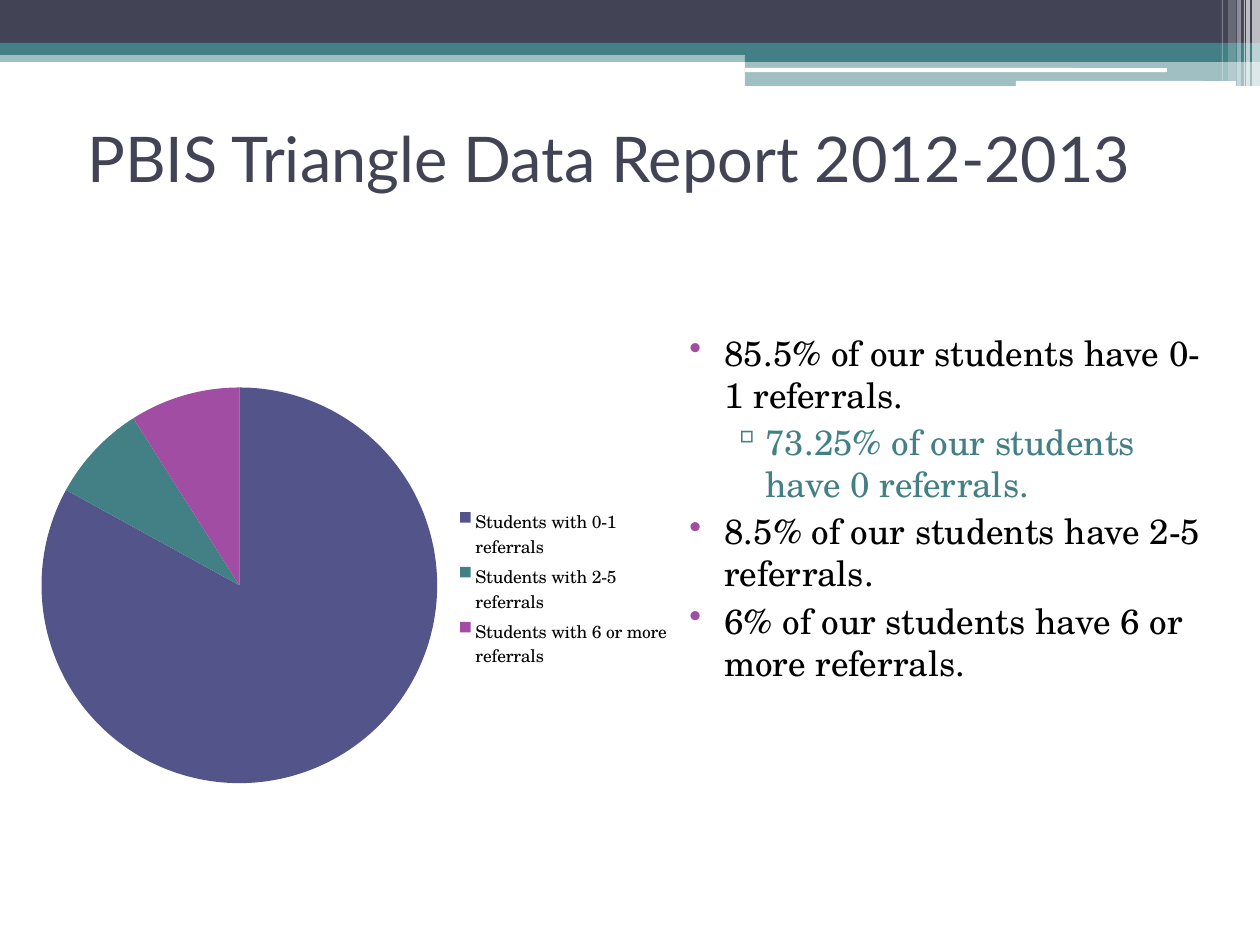
from lxml import etree
from pptx import Presentation
from pptx.chart.data import CategoryChartData
from pptx.dml.color import RGBColor
from pptx.enum.chart import XL_CHART_TYPE, XL_LEGEND_POSITION
from pptx.enum.shapes import MSO_SHAPE
from pptx.enum.text import MSO_ANCHOR, MSO_AUTO_SIZE, PP_ALIGN
from pptx.oxml import parse_xml
from pptx.oxml.ns import nsdecls, qn
from pptx.util import Pt

EMU_PER_PX = 914400 / 126
RECT, ROUNDED = MSO_SHAPE.RECTANGLE, MSO_SHAPE.ROUNDED_RECTANGLE
PIE, LEGEND_RIGHT = XL_CHART_TYPE.PIE, XL_LEGEND_POSITION.RIGHT
MIDDLE, CENTER, NO_AUTOFIT = MSO_ANCHOR.MIDDLE, PP_ALIGN.CENTER, MSO_AUTO_SIZE.NONE

WHITE = RGBColor(0xFF, 0xFF, 0xFF)
BLACK = RGBColor(0x00, 0x00, 0x00)
SLATE = RGBColor(0x42, 0x44, 0x56)
INDIGO = RGBColor(0x53, 0x54, 0x8A)
TEAL = RGBColor(0x43, 0x80, 0x86)
PURPLE = RGBColor(0xA0, 0x4D, 0xA3)
HEADING_FONT, BODY_FONT = "Lato", "TeX Gyre Schola"

HEADER_BANDS = [
    (RECT, (0, 50, 1260, 12), TEAL, 50),
    (RECT, (0, 0, 1260, 43), SLATE, 100),
    (RECT, (0, 43, 1260, 12), TEAL, 100),
    (RECT, (745, 49, 515, 13), TEAL, 100),
    (RECT, (745, 61, 515, 25), TEAL, 50),
    (ROUNDED, (745, 68, 422, 4), WHITE, 100),
    (ROUNDED, (1016, 81, 220, 5), WHITE, 100),
]
EDGE_STRIPES = [
    (1252, 8, 86, 65), (1246, 4, 86, 65), (1244, 1, 86, 60),
    (1237, 4, 86, 40), (1228, 8, 81, 20), (1222, 1, 81, 30),
]
FINDINGS = [
    (0, "85.5% of our students have 0-1 referrals."),
    (1, "73.25% of our students have 0 referrals."),
    (0, "8.5% of our students have 2-5 referrals."),
    (0, "6% of our students have 6 or more referrals."),
]
LEVELS = [
    {"indent": (50, -35), "bullet": "•", "bullet_color": PURPLE, "color": BLACK},
    {"indent": (91, -34), "bullet": "▫", "bullet_color": TEAL, "color": TEAL},
]
REFERRAL_GROUPS = [
    ("Students with 0-1 referrals", 83, INDIGO),
    ("Students with 2-5 referrals", 8, TEAL),
    ("Students with 6 or more referrals", 9, PURPLE),
]


def px(length):
    """Turn pixels into EMU."""
    return round(length * EMU_PER_PX)


def assign(target, values):
    """Set each attribute in values on target."""
    for name, value in values.items():
        setattr(target, name, value)


def format_font(font, face, size, color):
    """Give a font its face, size and colour."""
    assign(font, {"name": face, "size": Pt(size)})
    font.color.rgb = color


def add_band(slide, preset, box, color, opacity):
    """Add a borderless decorative band."""
    band = slide.shapes.add_shape(preset, *map(px, box))
    band.shadow.inherit = False
    band.fill.solid()
    band.fill.fore_color.rgb = color
    band.line.fill.background()
    if opacity < 100:
        tint = band._element.spPr.find(qn("a:solidFill")).find(qn("a:srgbClr"))
        etree.SubElement(tint, qn("a:alpha")).set("val", str(opacity * 1000))


def set_title(slide, wording):
    """Place and format the title placeholder."""
    title = slide.shapes.title
    assign(title, dict(zip(("left", "top", "width", "height"), map(px, (42, 84, 1134, 147)))))
    frame = title.text_frame
    assign(frame, {"text": wording, "vertical_anchor": MIDDLE,
                   "word_wrap": True, "auto_size": NO_AUTOFIT})
    paragraph = frame.paragraphs[0]
    paragraph.alignment = CENTER
    format_font(paragraph.runs[0].font, HEADING_FONT, 36, SLATE)


def set_bullet(paragraph, level):
    """Give a paragraph the indent and bullet of its level."""
    properties = paragraph._p.get_or_add_pPr()
    for name, length in zip(("marL", "indent"), level["indent"]):
        properties.set(name, str(px(length)))
    color = etree.SubElement(properties, qn("a:buClr"))
    etree.SubElement(color, qn("a:srgbClr")).set("val", str(level["bullet_color"]))
    etree.SubElement(properties, qn("a:buChar")).set("char", level["bullet"])


def add_findings(slide):
    """Add the bulleted list of findings."""
    frame = slide.shapes.add_textbox(*map(px, (662, 325, 557, 519))).text_frame
    frame.word_wrap = True
    for index, (depth, wording) in enumerate(FINDINGS):
        paragraph = frame.add_paragraph() if index else frame.paragraphs[0]
        assign(paragraph, {"level": depth, "space_before": Pt(3)})
        set_bullet(paragraph, LEVELS[depth])
        run = paragraph.add_run()
        run.text = wording
        format_font(run.font, BODY_FONT, 20, LEVELS[depth]["color"])


def set_plot_box(chart, fractions):
    """Fix the inner plot area as fractions of the chart."""
    places = "".join(f'<c:{tag} val="{value}"/>' for tag, value in fractions.items())
    plot_area = chart._chartSpace.chart.plotArea
    for layout in plot_area.findall(qn("c:layout")):
        plot_area.remove(layout)
    plot_area.insert(0, parse_xml(
        f'<c:layout {nsdecls("c")}><c:manualLayout><c:layoutTarget val="inner"/>'
        f'<c:xMode val="edge"/><c:yMode val="edge"/>{places}</c:manualLayout></c:layout>'))


def add_referral_pie(slide):
    """Add the pie chart of students by referral count."""
    names, shares, colors = zip(*REFERRAL_GROUPS)
    data = CategoryChartData()
    data.categories = names
    data.add_series("Series 1", shares)
    chart = slide.shapes.add_chart(PIE, *map(px, (21, 284, 662, 609)), data).chart
    assign(chart, {"has_title": False, "has_legend": True})
    assign(chart.legend, {"position": LEGEND_RIGHT, "include_in_layout": False})
    format_font(chart.font, BODY_FONT, 10, BLACK)
    plot = chart.plots[0]
    plot.vary_by_categories = True
    for index, color in enumerate(colors):
        wedge = plot.series[0].points[index].format
        wedge.fill.solid()
        wedge.fill.fore_color.rgb = color
        wedge.line.fill.background()
    set_plot_box(chart, {"x": 0.03, "y": 0.17, "w": 0.6, "h": 0.65})


def main():
    """Build and save the referral report slide."""
    presentation = Presentation()
    assign(presentation, {"slide_width": px(1260), "slide_height": px(945)})
    slide = presentation.slides.add_slide(presentation.slide_layouts[5])
    for band in HEADER_BANDS:
        add_band(slide, *band)
    for left, width, height, opacity in EDGE_STRIPES:
        add_band(slide, RECT, (left, 0, width, height), WHITE, opacity)
    set_title(slide, "PBIS Triangle Data Report 2012-2013")
    add_findings(slide)
    add_referral_pie(slide)
    presentation.save("out.pptx")


if __name__ == "__main__":
    main()
